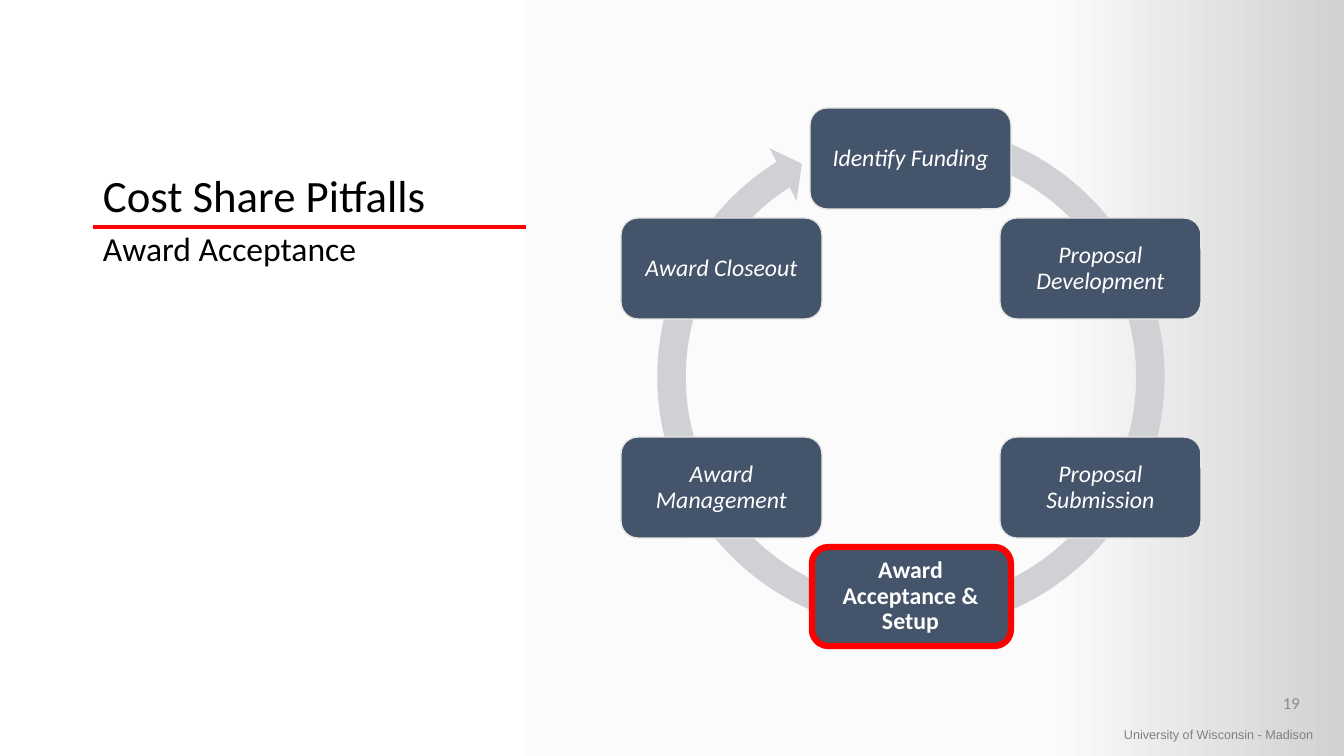
from copy import deepcopy
from math import cos, radians, sin

from lxml.etree import SubElement
from pptx import Presentation
from pptx.dml.color import RGBColor
from pptx.enum.shapes import MSO_CONNECTOR, MSO_SHAPE
from pptx.enum.text import MSO_ANCHOR, PP_ALIGN
from pptx.oxml.ns import qn
from pptx.util import Emu, Pt

BLACK = RGBColor(0x00, 0x00, 0x00)
WHITE = RGBColor(0xFF, 0xFF, 0xFF)
RED = RGBColor(0xFF, 0x00, 0x00)
SLATE = RGBColor(0x44, 0x54, 0x6A)
RING_GREY = RGBColor(0xCF, 0xD1, 0xD4)
EDGE_GREY = RGBColor(0xE7, 0xE6, 0xE6)
NUMBER_GREY = RGBColor(0x8C, 0x8C, 0x8C)
FOOTER_GREY = RGBColor(0x80, 0x80, 0x80)
BACKGROUND = [(0, WHITE), (0.78, RGBColor(0xFB, 0xFB, 0xFB)),
              (1, RGBColor(0xD1, 0xD1, 0xD1))]

SLIDE_WIDTH, SLIDE_HEIGHT = 1344, 756
EMU_PER_PX = 12192000 / SLIDE_WIDTH


def px(*lengths):
    return [Emu(round(length * EMU_PER_PX)) for length in lengths]


class Deck:
    """Holds the style and the current slide."""

    font = "Calibri"

    def __init__(self):
        self.prs = Presentation()
        self.prs.slide_width, self.prs.slide_height = px(SLIDE_WIDTH, SLIDE_HEIGHT)
        self.slide = self.prs.slides.add_slide(self.prs.slide_layouts[6])

    def background(self, stops):
        fill = self.slide.background.fill
        fill.gradient()
        fill.gradient_angle = 0
        stop_list = self.slide.element.xpath(".//a:gsLst")[0]
        while len(stop_list) < len(stops):
            stop_list.append(deepcopy(stop_list[-1]))
        for stop, (position, color) in zip(fill.gradient_stops, stops):
            stop.position = position
            stop.color.rgb = color

    def fill_text(self, frame, words, size, color, insets, align=PP_ALIGN.LEFT,
                  anchor=MSO_ANCHOR.TOP, spacing=1.0, bold=False, italic=False,
                  font=None, wrap=True):
        frame.word_wrap = wrap
        frame.vertical_anchor = anchor
        side, edge = px(*insets)
        frame.margin_left = frame.margin_right = side
        frame.margin_top = frame.margin_bottom = edge
        paragraph = frame.paragraphs[0]
        paragraph.alignment = align
        paragraph.line_spacing = spacing
        run = paragraph.add_run()
        run.text = words
        run.font.name = font or self.font
        run.font.size = Pt(size)
        run.font.color.rgb = color
        run.font.bold, run.font.italic = bold, italic

    def text(self, box, words, size, color, **style):
        frame = self.slide.shapes.add_textbox(*px(*box)).text_frame
        self.fill_text(frame, words, size, color, (10, 5), **style)

    def shape(self, preset, box, fill=None, line=None, weight=1, adjust=()):
        shape = self.slide.shapes.add_shape(preset, *px(*box))
        shape.shadow.inherit = False
        if fill is None:
            shape.fill.background()
        else:
            shape.fill.solid()
            shape.fill.fore_color.rgb = fill
        if line is None:
            shape.line.fill.background()
        else:
            shape.line.color.rgb = line
            shape.line.width = Pt(weight)
        for index, value in enumerate(adjust):
            shape.adjustments[index] = value
        return shape

    def rule(self, start, end, color, weight):
        rule = self.slide.shapes.add_connector(
            MSO_CONNECTOR.STRAIGHT, *px(*start, *end))
        rule.line.color.rgb = color
        rule.line.width = Pt(weight)
        SubElement(rule.element.spPr, qn("a:effectLst"))

    def stage(self, box, words, current):
        card = self.shape(MSO_SHAPE.ROUNDED_RECTANGLE, box, SLATE, EDGE_GREY)
        self.fill_text(card.text_frame, words, 17, WHITE, (7, 7),
                       align=PP_ALIGN.CENTER, anchor=MSO_ANCHOR.MIDDLE,
                       spacing=0.9, bold=current, italic=not current)


def main():
    deck = Deck()
    deck.background(BACKGROUND)

    # Footer and heading
    deck.text((1114, 722, 230, 25), "University of Wisconsin - Madison", 9,
              FOOTER_GREY, font="Arial", wrap=False)
    deck.rule((93, 227), (526, 227), RED, 3)
    deck.text((93, 50, 433, 177), "Cost Share Pitfalls", 32, BLACK,
              anchor=MSO_ANCHOR.BOTTOM, spacing=0.9)
    deck.text((93, 227, 433, 420), "Award Acceptance", 24, BLACK, spacing=0.9)

    # Award life cycle, clockwise from the top
    deck.shape(MSO_SHAPE.CIRCULAR_ARROW, (642, 108, 538, 538), RING_GREY,
               adjust=(0.053, 3.126, 142.629, 171.067, 0.055))
    stages = ["Identify Funding", "Proposal Development", "Proposal Submission",
              "Award Acceptance & Setup", "Award Management", "Award Closeout"]
    current_stage = 3
    center_x, center_y, radius = 911, 378, 219
    width, height = 201, 101
    for index, words in enumerate(stages):
        angle = radians(index * 360 / len(stages))
        left = round(center_x + radius * sin(angle) - width / 2)
        top = round(center_y - radius * cos(angle) - height / 2)
        deck.stage((left, top, width, height), words, index == current_stage)

    # Slide number
    deck.text((1008, 683, 302, 40), "19", 12, NUMBER_GREY,
              align=PP_ALIGN.RIGHT, anchor=MSO_ANCHOR.MIDDLE)

    # Highlight around the current stage
    deck.shape(MSO_SHAPE.ROUNDED_RECTANGLE, (812, 547, 199, 99),
               line=RED, weight=4.5)

    deck.prs.save("out.pptx")


if __name__ == "__main__":
    main()
